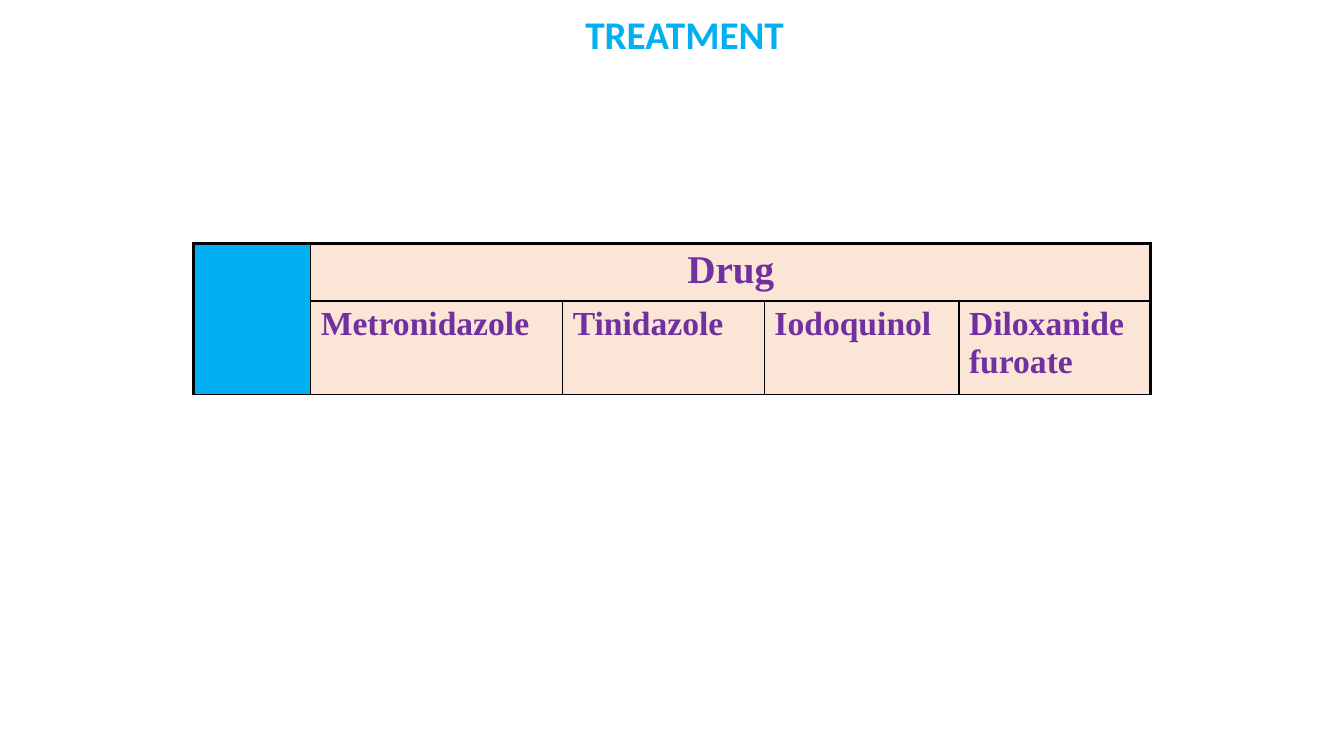
"""Build a slide with a treatment title and a table of drug names."""
import pptx
import pptx.dml.color
import pptx.enum.text
import pptx.oxml
import pptx.oxml.ns
import pptx.util

Pt = pptx.util.Pt

TITLE = "TREATMENT"
HEADING = "Drug"
DRUGS = ["Metronidazole", "Tinidazole", "Iodoquinol", "Diloxanide furoate"]
COLUMN_WIDTHS = [84, 180, 144, 139, 137]
ROW_HEIGHTS = [41, 67]
TABLE_LEFT, TABLE_TOP = 138, 174
TITLE_BOX = (138, 4, 702, 80)
THIN, THICK = 1, 2.25
COLORS = {"blue": "00B0F0", "peach": "FBE5D6", "purple": "7030A0", "black": "000000"}


def rgb(name):
    """Return a named color."""
    return pptx.dml.color.RGBColor.from_string(COLORS[name])


def format_paragraph(paragraph, font_name, size, color):
    """Apply a bold font to a paragraph."""
    font = paragraph.font
    font.name, font.size, font.bold = font_name, Pt(size), True
    font.color.rgb = rgb(color)


def add_borders(cell, widths):
    """Draw the four cell borders with the given widths."""
    properties = cell._tc.get_or_add_tcPr()
    for side, width in widths.items():
        properties.append(pptx.oxml.parse_xml(
            f'<a:ln{side} {pptx.oxml.ns.nsdecls("a")} w="{Pt(width)}"><a:solidFill>'
            f'<a:srgbClr val="{COLORS["black"]}"/></a:solidFill></a:ln{side}>'))


def add_title(slide):
    """Place the title."""
    title = slide.shapes.title
    title.left, title.top, title.width, title.height = map(Pt, TITLE_BOX)
    frame = title.text_frame
    frame.text = TITLE
    frame.auto_size = pptx.enum.text.MSO_AUTO_SIZE.NONE
    frame.vertical_anchor = pptx.enum.text.MSO_ANCHOR.TOP
    paragraph = frame.paragraphs[0]
    paragraph.alignment = pptx.enum.text.PP_ALIGN.CENTER
    format_paragraph(paragraph, "Calibri", 28, "blue")


def add_drug_table(slide):
    """Place the table with its merged corner and heading."""
    table = slide.shapes.add_table(
        len(ROW_HEIGHTS), len(COLUMN_WIDTHS), Pt(TABLE_LEFT), Pt(TABLE_TOP),
        Pt(sum(COLUMN_WIDTHS)), Pt(sum(ROW_HEIGHTS))).table
    table.first_row = table.horz_banding = False
    for column, width in zip(table.columns, COLUMN_WIDTHS):
        column.width = Pt(width)
    for row, height in zip(table.rows, ROW_HEIGHTS):
        row.height = Pt(height)

    last = len(COLUMN_WIDTHS) - 1
    table.cell(0, 0).merge(table.cell(1, 0))
    table.cell(0, 1).merge(table.cell(0, last))
    for row in range(len(ROW_HEIGHTS)):
        for column in range(len(COLUMN_WIDTHS)):
            cell = table.cell(row, column)
            reaches_right = column == last or (cell.is_merge_origin and column == 1)
            add_borders(cell, {
                "L": THICK if column == 0 else THIN,
                "R": THICK if reaches_right else THIN,
                "T": THICK if row == 0 else THIN,
                "B": THIN})
            cell.fill.solid()
            cell.fill.fore_color.rgb = rgb("blue" if column == 0 else "peach")

    heading = table.cell(0, 1)
    heading.text = HEADING
    paragraph = heading.text_frame.paragraphs[0]
    paragraph.alignment = pptx.enum.text.PP_ALIGN.CENTER
    format_paragraph(paragraph, "Times New Roman", 28, "purple")
    for column, drug in enumerate(DRUGS, start=1):
        cell = table.cell(1, column)
        cell.text = drug
        format_paragraph(cell.text_frame.paragraphs[0], "Times New Roman", 24, "purple")


def main():
    """Build and save the presentation."""
    presentation = pptx.Presentation()
    presentation.slide_width, presentation.slide_height = Pt(960), Pt(540)
    slide = presentation.slides.add_slide(presentation.slide_layouts[5])
    add_title(slide)
    add_drug_table(slide)
    presentation.save("out.pptx")


if __name__ == "__main__":
    main()
